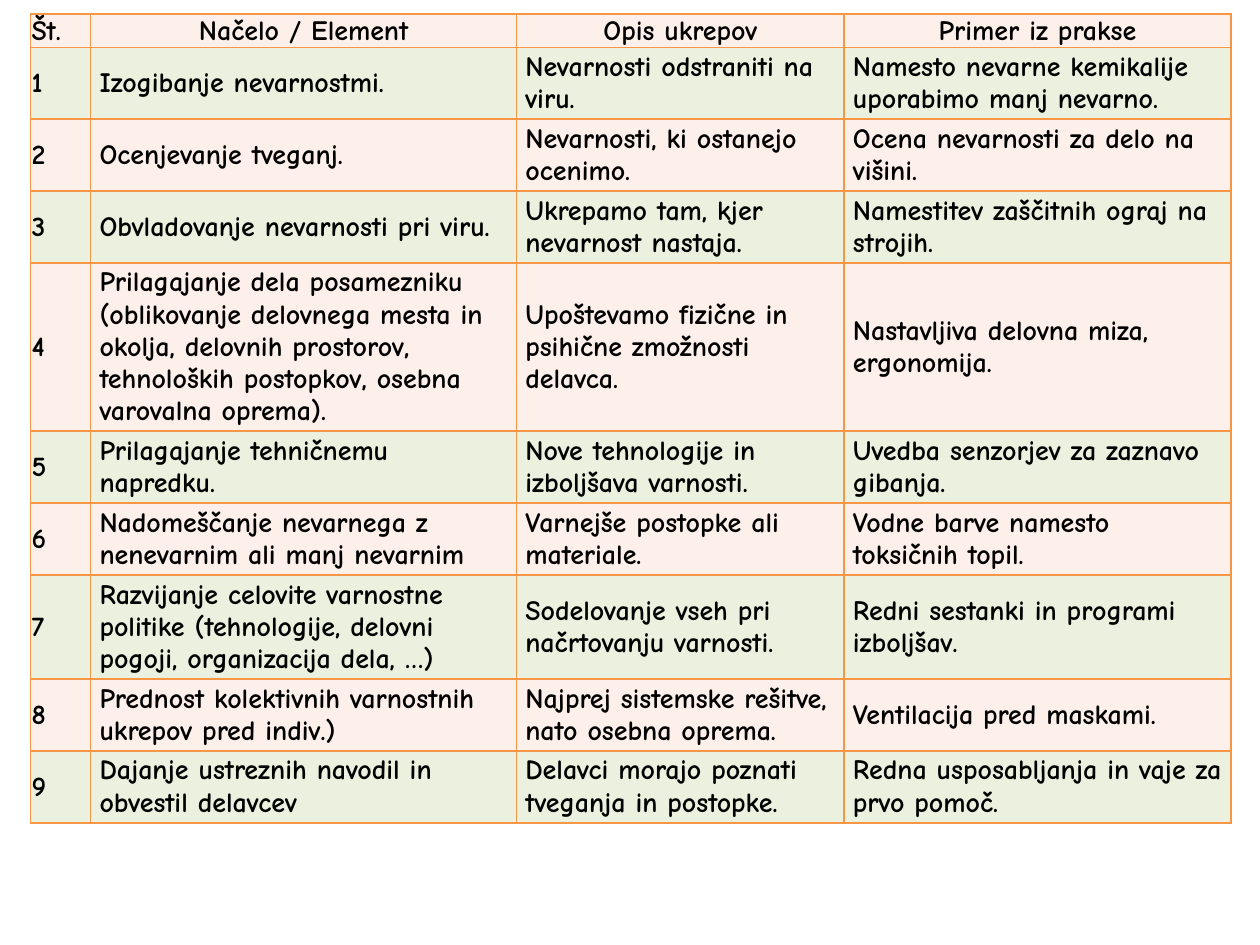
from pptx import Presentation
from pptx.dml.color import RGBColor
from pptx.enum.text import MSO_ANCHOR, PP_ALIGN
from pptx.oxml import parse_xml
from pptx.oxml.ns import nsdecls
from pptx.util import Inches, Pt

FONT = "Comic Neue"
TEXT_COLOR = "000000"
BORDER_COLOR = "F79646"
ROW_FILLS = ("FDEFE9", "EBF1DE")
COLUMN_WIDTHS = (0.48, 3.38, 2.6, 3.07)
ROW_HEIGHTS = (0.16, 0.32, 0.32, 0.32, 0.32, 0.32, 0.48, 0.32, 0.48, 0.32)
NARROW_MARGINS = (0.01, 0.01, 0.01, 0)
WIDE_MARGINS = (0.07, 0.03, 0.07, 0.03)

HEADINGS = ("Št.", "Načelo / Element", "Opis ukrepov", "Primer iz prakse")
PRINCIPLES = (
    ("Izogibanje nevarnostmi.",
     "Nevarnosti odstraniti na viru.",
     "Namesto nevarne kemikalije uporabimo manj nevarno."),
    ("Ocenjevanje tveganj.",
     "Nevarnosti, ki ostanejo ocenimo.",
     "Ocena nevarnosti za delo na višini."),
    ("Obvladovanje nevarnosti pri viru.",
     "Ukrepamo tam, kjer nevarnost nastaja.",
     "Namestitev zaščitnih ograj na strojih."),
    ("Prilagajanje dela posamezniku (oblikovanje delovnega mesta in okolja, "
     "delovnih prostorov, tehnoloških postopkov, osebna varovalna oprema).",
     "Upoštevamo fizične in psihične zmožnosti delavca.",
     "Nastavljiva delovna miza, ergonomija."),
    ("Prilagajanje tehničnemu napredku.",
     "Nove tehnologije in izboljšava varnosti.",
     "Uvedba senzorjev za zaznavo gibanja."),
    ("Nadomeščanje nevarnega z nenevarnim ali manj nevarnim",
     "Varnejše postopke ali materiale.",
     "Vodne barve namesto toksičnih topil."),
    ("Razvijanje celovite varnostne politike (tehnologije, delovni pogoji, "
     "organizacija dela, …)",
     "Sodelovanje vseh pri načrtovanju varnosti.",
     "Redni sestanki in programi izboljšav."),
    ("Prednost kolektivnih varnostnih ukrepov pred indiv.)",
     "Najprej sistemske rešitve, nato osebna oprema.",
     "Ventilacija pred maskami."),
    ("Dajanje ustreznih navodil in obvestil delavcev",
     "Delavci morajo poznati tveganja in postopke.",
     "Redna usposabljanja in vaje za prvo pomoč."),
)


def rgb(value):
    return RGBColor.from_string(value)


def set_borders(cell):
    properties = cell._tc.get_or_add_tcPr()
    for position, side in enumerate(("lnL", "lnR", "lnT", "lnB")):
        border = parse_xml(
            f'<a:{side} {nsdecls("a")} w="{Pt(1)}"><a:solidFill>'
            f'<a:srgbClr val="{BORDER_COLOR}"/></a:solidFill></a:{side}>'
        )
        properties.insert(position, border)


def set_margins(cell, margins):
    left, top, right, bottom = (Inches(margin) for margin in margins)
    cell.margin_left, cell.margin_top = left, top
    cell.margin_right, cell.margin_bottom = right, bottom


def fill_cell(cell, text, fill, margins, alignment):
    cell.text_frame.text = text
    cell.vertical_anchor = MSO_ANCHOR.MIDDLE
    set_margins(cell, margins)
    cell.fill.solid()
    cell.fill.fore_color.rgb = rgb(fill)
    set_borders(cell)
    paragraph = cell.text_frame.paragraphs[0]
    paragraph.alignment = alignment
    font = paragraph.runs[0].font
    font.name = FONT
    font.size = Pt(16)
    font.bold = True
    font.color.rgb = rgb(TEXT_COLOR)


def add_principles_table(slide):
    rows = [HEADINGS]
    rows += [(str(number), *texts) for number, texts in enumerate(PRINCIPLES, 1)]
    height = Inches(7.28)
    shape = slide.shapes.add_table(
        len(rows), len(HEADINGS), Inches(0.24), Inches(0.11), Inches(9.53), height
    )
    table = shape.table
    for column, width in zip(table.columns, COLUMN_WIDTHS):
        column.width = Inches(width)
    for row, row_height in zip(table.rows, ROW_HEIGHTS):
        row.height = Inches(row_height)
    shape.height = height
    for row_index, texts in enumerate(rows):
        for column_index, text in enumerate(texts):
            is_heading = row_index == 0
            is_number = column_index == 0
            fill_cell(
                table.cell(row_index, column_index),
                text,
                ROW_FILLS[row_index % 2],
                NARROW_MARGINS if is_heading or is_number else WIDE_MARGINS,
                PP_ALIGN.CENTER if is_heading and not is_number else PP_ALIGN.LEFT,
            )


def main():
    presentation = Presentation()
    presentation.slide_width = Inches(10)
    presentation.slide_height = Inches(7.5)
    slide = presentation.slides.add_slide(presentation.slide_layouts[6])
    add_principles_table(slide)
    presentation.save("out.pptx")


if __name__ == "__main__":
    main()
